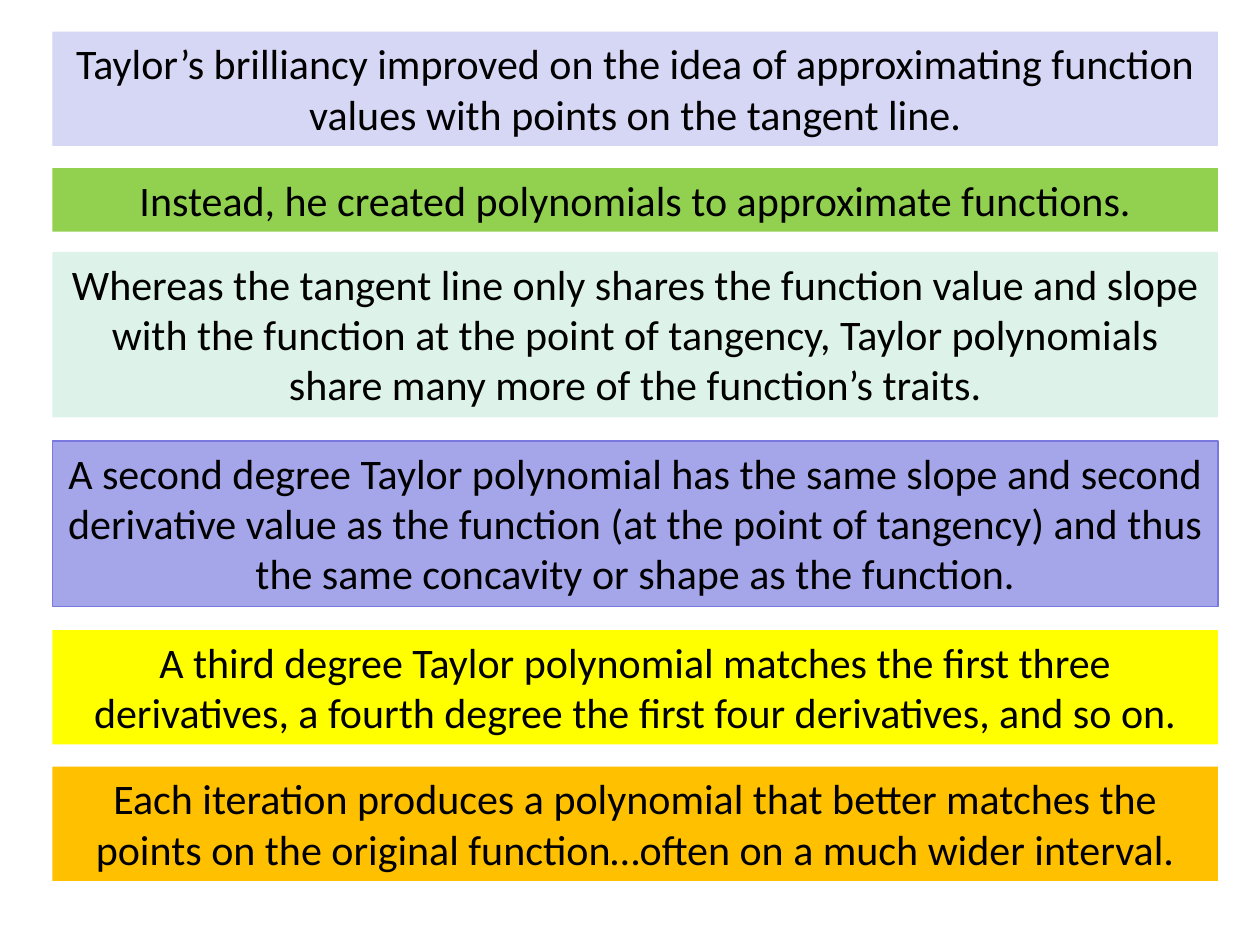
from pptx import Presentation
from pptx.dml.color import RGBColor
from pptx.enum.shapes import MSO_SHAPE as Shape
from pptx.enum.text import MSO_ANCHOR as Anchor, MSO_AUTO_SIZE as AutoSize, PP_ALIGN as Align
from pptx.util import Pt

LEFT, WIDTH = 30, 666
LINE_HEIGHT, PADDING = 29.1, 7.2
FRAME_FORMAT = {
    "word_wrap": True,
    "auto_size": AutoSize.SHAPE_TO_FIT_TEXT,
    "vertical_anchor": Anchor.TOP,
    "margin_left": Pt(7.2),
    "margin_right": Pt(7.2),
    "margin_top": Pt(3.6),
    "margin_bottom": Pt(3.6),
}
FONT_FORMAT = {"name": "Calibri", "size": Pt(24)}

STATEMENTS = [
    (18, 2, "D6D6F5", None,
     "Taylor’s brilliancy improved on the idea of approximating function "
     "values with points on the tangent line."),
    (96, 1, "92D050", None,
     "Instead, he created polynomials to approximate functions."),
    (144, 3, "DDF3EA", None,
     "Whereas the tangent line only shares the function value and slope with "
     "the function at the point of tangency, Taylor polynomials share many "
     "more of the function’s traits."),
    (252, 3, "A5A5E9", "7878DE",
     "A second degree Taylor polynomial has the same slope and second "
     "derivative value as the function (at the point of tangency) and thus "
     "the same concavity or shape as the function."),
    (360, 2, "FFFF00", None,
     "A third degree Taylor polynomial matches the first three derivatives, "
     "a fourth degree the first four derivatives, and so on."),
    (438, 2, "FFC000", None,
     "Each iteration produces a polynomial that better matches the points on "
     "the original function…often on a much wider interval."),
]


def set_color(color_format, value):
    """Give a colour format a solid hex colour."""
    color_format.rgb = RGBColor.from_string(value)


def apply_format(target, values):
    """Set each attribute in values on the target."""
    for name, value in values.items():
        setattr(target, name, value)


def paint_box(box, fill, outline):
    """Fill a box and draw its outline if it has one."""
    box.shadow.inherit = False
    box.fill.solid()
    set_color(box.fill.fore_color, fill)
    if outline:
        set_color(box.line.color, outline)
        box.line.width = Pt(0.75)
    else:
        box.line.fill.background()


def write_text(box, text):
    """Write one centred paragraph in a box."""
    apply_format(box.text_frame, FRAME_FORMAT)
    para = box.text_frame.paragraphs[0]
    para.alignment = Align.CENTER
    span = para.add_run()
    span.text = text
    apply_format(span.font, FONT_FORMAT)
    set_color(span.font.color, "000000")


def add_statement(page, top, line_count, fill, outline, text):
    """Add a coloured box as tall as its lines of text."""
    height = PADDING + line_count * LINE_HEIGHT
    box = page.shapes.add_shape(
        Shape.RECTANGLE, Pt(LEFT), Pt(top), Pt(WIDTH), Pt(height))
    paint_box(box, fill, outline)
    write_text(box, text)


def main():
    """Build the slide of statements on Taylor polynomials."""
    deck = Presentation()
    apply_format(deck, {"slide_width": Pt(720), "slide_height": Pt(540)})
    page = deck.slides.add_slide(deck.slide_layouts[6])
    for statement in STATEMENTS:
        add_statement(page, *statement)
    deck.save("out.pptx")


if __name__ == "__main__":
    main()
